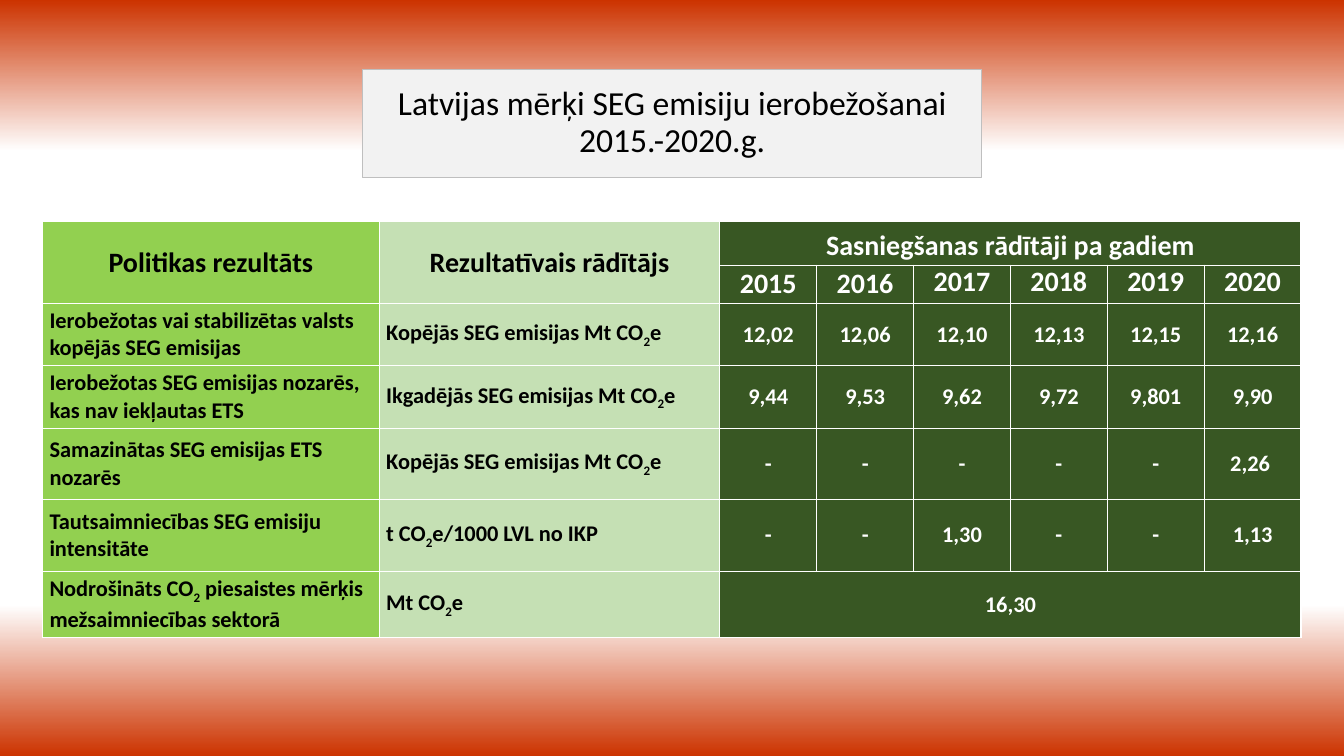
from lxml import etree
from pptx import Presentation
from pptx.dml.color import RGBColor
from pptx.enum.text import MSO_ANCHOR, MSO_AUTO_SIZE, PP_ALIGN
from pptx.oxml.ns import qn
from pptx.util import Pt

CENTER, LEFT = PP_ALIGN.CENTER, PP_ALIGN.LEFT
MIDDLE, TOP = MSO_ANCHOR.MIDDLE, MSO_ANCHOR.TOP
NO_FIT = MSO_AUTO_SIZE.NONE

COLORS = {
    "red": "CC3300",
    "white": "FFFFFF",
    "black": "000000",
    "lime": "92D050",
    "pale": "C5E0B4",
    "dark": "385723",
    "panel": "F2F2F2",
    "edge": "BFBFBF",
}
FONT = "Calibri"
SUBSCRIPT = "₂"
BACKGROUND_STOPS = [(0, "red"), (20, "white"), (80, "white"), (100, "red")]
COLUMN_WIDTHS = [240.5, 243.3] + [69.2] * 6
ROW_HEIGHTS = [31, 27.2, 44.7, 44.7, 50.7, 51.5, 47.4]
YEARS = ["2015", "2016", "2017", "2018", "2019", "2020"]
TARGETS = [
    ["Ierobežotas vai stabilizētas valsts kopējās SEG emisijas",
     "Kopējās SEG emisijas Mt CO₂e",
     "12,02", "12,06", "12,10", "12,13", "12,15", "12,16"],
    ["Ierobežotas SEG emisijas nozarēs, kas nav iekļautas ETS",
     "Ikgadējās SEG emisijas Mt CO₂e",
     "9,44", "9,53", "9,62", "9,72", "9,801", "9,90"],
    ["Samazinātas SEG emisijas ETS nozarēs",
     "Kopējās SEG emisijas Mt CO₂e",
     "-", "-", "-", "-", "-", "2,26 "],
    ["Tautsaimniecības SEG emisiju intensitāte",
     "t CO₂e/1000 LVL no IKP",
     "-", "-", "1,30", "-", "-", "1,13"],
    ["Nodrošināts CO₂ piesaistes mērķis mežsaimniecības sektorā",
     "Mt CO₂e", "16,30"],
]


def rgb(name):
    return RGBColor.from_string(COLORS[name])


def add_color(parent, name):
    etree.SubElement(parent, qn("a:srgbClr"), val=COLORS[name])


def write_text(tf, text, size=16, color="black", bold=True, align=LEFT,
               line=1.0, space=4):
    p = tf.paragraphs[0]
    p.alignment = align
    p.line_spacing = line
    p.space_before = p.space_after = Pt(space)
    for part in text.partition(SUBSCRIPT):
        if not part:
            continue
        r = p.add_run()
        r.text = "2" if part == SUBSCRIPT else part
        r.font.name = FONT
        r.font.size = Pt(size)
        r.font.bold = bold
        r.font.color.rgb = rgb(color)
        if part == SUBSCRIPT:
            r._r.get_or_add_rPr().set("baseline", "-25000")


def set_background(s):
    fill = s.background.fill
    fill.gradient()
    fill.gradient_angle = 90
    stops = s.element.find(".//" + qn("a:gsLst"))
    for stop in list(stops):
        stops.remove(stop)
    for position, name in BACKGROUND_STOPS:
        stop = etree.SubElement(stops, qn("a:gs"), pos=str(position * 1000))
        add_color(stop, name)


def format_title(title):
    title.left, title.top = Pt(259.2), Pt(49.5)
    title.width, title.height = Pt(442), Pt(77)
    outline = etree.SubElement(title.element.spPr, qn("a:prstGeom"),
                               prst="roundRect")
    guides = etree.SubElement(outline, qn("a:avLst"))
    etree.SubElement(guides, qn("a:gd"), name="adj", fmla="val 18400")
    title.fill.solid()
    title.fill.fore_color.rgb = rgb("panel")
    title.line.color.rgb = rgb("edge")
    title.line.width = Pt(0.75)
    tf = title.text_frame
    tf.word_wrap = True
    tf.auto_size = NO_FIT
    tf.vertical_anchor = MIDDLE
    write_text(tf, "Latvijas mērķi SEG emisiju ierobežošanai 2015.-2020.g.",
               size=24, bold=False, align=CENTER, line=0.9, space=0)


def format_cell(cell, fill):
    tcPr = cell._tc.get_or_add_tcPr()
    for side in ("a:lnL", "a:lnR", "a:lnT", "a:lnB"):
        border = etree.SubElement(tcPr, qn(side), w=str(Pt(1)))
        add_color(etree.SubElement(border, qn("a:solidFill")), "white")
    cell.fill.solid()
    cell.fill.fore_color.rgb = rgb(fill)
    cell.margin_left = cell.margin_right = Pt(5)
    cell.margin_top = cell.margin_bottom = 0
    cell.vertical_anchor = MIDDLE


def add_targets_table(s):
    frame = s.shapes.add_table(len(ROW_HEIGHTS), len(COLUMN_WIDTHS),
                               Pt(30.4), Pt(158.4),
                               Pt(sum(COLUMN_WIDTHS)), Pt(sum(ROW_HEIGHTS)))
    table = frame.table
    table.first_row = table.horz_banding = False
    for column, width in zip(table.columns, COLUMN_WIDTHS):
        column.width = Pt(width)
    for row, height in zip(table.rows, ROW_HEIGHTS):
        row.height = Pt(height)
        for cell, fill in zip(row.cells, ["lime", "pale"] + ["dark"] * 6):
            format_cell(cell, fill)

    table.cell(0, 0).merge(table.cell(1, 0))
    table.cell(0, 1).merge(table.cell(1, 1))
    table.cell(0, 2).merge(table.cell(0, 7))
    table.cell(6, 2).merge(table.cell(6, 7))

    heading = {"size": 20, "align": CENTER}
    write_text(table.cell(0, 0).text_frame, "Politikas rezultāts", **heading)
    write_text(table.cell(0, 1).text_frame, "Rezultatīvais rādītājs", **heading)
    write_text(table.cell(0, 2).text_frame, "Sasniegšanas rādītāji pa gadiem",
               color="white", line=1.15, **heading)
    for col, year in enumerate(YEARS, 2):
        cell = table.cell(1, col)
        cell.vertical_anchor = MIDDLE if col < 4 else TOP
        write_text(cell.text_frame, year, color="white", **heading)
    for row, values in enumerate(TARGETS, 2):
        for col, value in enumerate(values):
            figure = col > 1
            write_text(table.cell(row, col).text_frame, value,
                       color="white" if figure else "black",
                       align=CENTER if figure else LEFT)


def main():
    prs = Presentation()
    prs.slide_width, prs.slide_height = Pt(960), Pt(540)
    s = prs.slides.add_slide(prs.slide_layouts[5])
    set_background(s)
    format_title(s.shapes.title)
    add_targets_table(s)
    prs.save("out.pptx")


if __name__ == "__main__":
    main()
